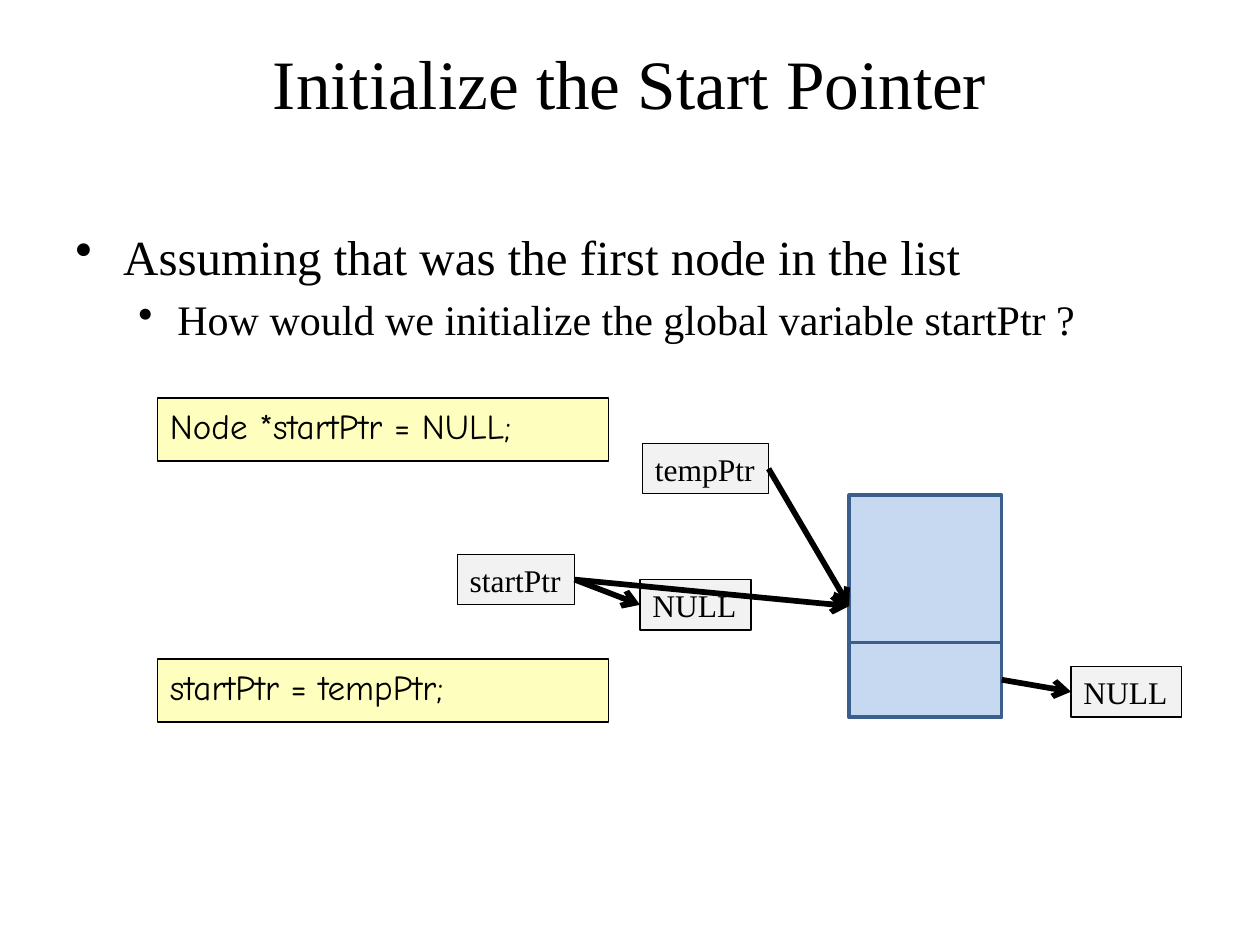
from pptx import Presentation
from pptx.dml.color import RGBColor
from pptx.enum.shapes import MSO_CONNECTOR, MSO_SHAPE
from pptx.enum.text import MSO_ANCHOR, MSO_AUTO_SIZE, PP_ALIGN
from pptx.oxml.xmlchemy import OxmlElement
from pptx.util import Inches, Pt

RECTANGLE = MSO_SHAPE.RECTANGLE
STRAIGHT = MSO_CONNECTOR.STRAIGHT
TOP, MIDDLE = MSO_ANCHOR.TOP, MSO_ANCHOR.MIDDLE
LEFT, CENTER = PP_ALIGN.LEFT, PP_ALIGN.CENTER
NO_AUTOFIT, GROW = MSO_AUTO_SIZE.NONE, MSO_AUTO_SIZE.SHAPE_TO_FIT_TEXT

BLACK = RGBColor(0x00, 0x00, 0x00)
CODE_YELLOW = RGBColor(0xFE, 0xFE, 0xBE)
NODE_BLUE = RGBColor(0xC6, 0xD9, 0xF1)
NODE_OUTLINE = RGBColor(0x3A, 0x5F, 0x8C)
LABEL_GRAY = RGBColor(0xF2, 0xF2, 0xF2)

SERIF = "Times New Roman"
CODE_FONT = "Comic Neue"

COLUMNS, ROWS = 20, 15
LEFT_SITE, RIGHT_SITE = 1, 3


class SlideBuilder:
    def __init__(self, presentation):
        self.column = presentation.slide_width / COLUMNS
        self.row = presentation.slide_height / ROWS
        self.slide = presentation.slides.add_slide(presentation.slide_layouts[5])

    def area(self, left, top, width, height):
        return (round(left * self.column), round(top * self.row),
                round(width * self.column), round(height * self.row))

    def add_run(self, paragraph, text, size, font=SERIF):
        run = paragraph.add_run()
        run.text = text
        run.font.name = font
        run.font.size = Pt(size)
        run.font.color.rgb = BLACK

    def title(self, text, area):
        shape = self.slide.shapes.title
        shape.left, shape.top, shape.width, shape.height = self.area(*area)
        frame = shape.text_frame
        frame.auto_size = NO_AUTOFIT
        frame.vertical_anchor = MIDDLE
        paragraph = frame.paragraphs[0]
        paragraph.alignment = CENTER
        self.add_run(paragraph, text, 39.6)

    def bullets(self, items, area):
        frame = self.slide.shapes.add_textbox(*self.area(*area)).text_frame
        frame.word_wrap = True
        for index, (text, level, size, margin, hanging) in enumerate(items):
            paragraph = frame.add_paragraph() if index else frame.paragraphs[0]
            paragraph.level = level
            paragraph.space_before = Pt(size * 0.2)
            properties = paragraph._p.get_or_add_pPr()
            properties.set("marL", str(Inches(margin)))
            properties.set("indent", str(-Inches(hanging)))
            bullet = OxmlElement("a:buChar")
            bullet.set("char", "•")
            properties.append(bullet)
            self.add_run(paragraph, text, size)

    def box(self, area, fill, outline=BLACK, weight=0.75):
        shape = self.slide.shapes.add_shape(RECTANGLE, *self.area(*area))
        shape.shadow.inherit = False
        shape.fill.solid()
        shape.fill.fore_color.rgb = fill
        shape.line.color.rgb = outline
        shape.line.width = Pt(weight)
        return shape

    def text_box(self, text, area, fill, size, font):
        shape = self.box(area, fill)
        shape.text_frame.vertical_anchor = TOP
        paragraph = shape.text_frame.paragraphs[0]
        paragraph.alignment = LEFT
        self.add_run(paragraph, text, size, font)
        return shape

    def code(self, text, top):
        self.text_box(text, (2.5, top, 7.16, 1), CODE_YELLOW, 20, CODE_FONT)

    def label(self, text, left, top, width):
        shape = self.text_box(text, (left, top, width, 0.8), LABEL_GRAY, 18, SERIF)
        shape.text_frame.word_wrap = False
        shape.text_frame.auto_size = GROW
        return shape

    def node_part(self, top, height):
        return self.box((13.48, top, 2.42, height), NODE_BLUE, NODE_OUTLINE, 2)

    def pointer(self, source, target):
        connector = self.slide.shapes.add_connector(STRAIGHT, 0, 0, 0, 0)
        connector.begin_connect(source, RIGHT_SITE)
        connector.end_connect(target, LEFT_SITE)
        connector.line.color.rgb = BLACK
        connector.line.width = Pt(3.25)
        arrowhead = OxmlElement("a:tailEnd")
        arrowhead.set("type", "arrow")
        connector.line._get_or_add_ln().append(arrowhead)
        connector._element.spPr.append(OxmlElement("a:effectLst"))


def main():
    presentation = Presentation()
    presentation.slide_width = Inches(10)
    presentation.slide_height = Inches(7.5)
    builder = SlideBuilder(presentation)

    builder.title("Initialize the Start Pointer", (1, 0.6, 18, 1.4))
    builder.bullets([
        ("Assuming that was the first node in the list", 0, 28, 0.38, 0.38),
        ("How would we initialize the global variable startPtr ?", 1, 24, 0.81, 0.31),
    ], (1, 3.5, 18, 2.34))
    builder.code("Node *startPtr = NULL;", 6.32)
    builder.code("startPtr = tempPtr;", 10.46)

    node = builder.node_part(7.86, 3.52)
    next_field = builder.node_part(10.2, 1.18)
    temp_pointer = builder.label("tempPtr", 10.2, 7.04, 2)
    next_null = builder.label("NULL", 17, 10.58, 1.76)
    start_pointer = builder.label("startPtr", 7.26, 8.8, 1.86)
    start_null = builder.label("NULL", 10.16, 9.2, 1.76)

    for source, target in (
        (temp_pointer, node),
        (next_field, next_null),
        (start_pointer, start_null),
        (start_pointer, node),
    ):
        builder.pointer(source, target)

    presentation.save("out.pptx")


if __name__ == "__main__":
    main()
